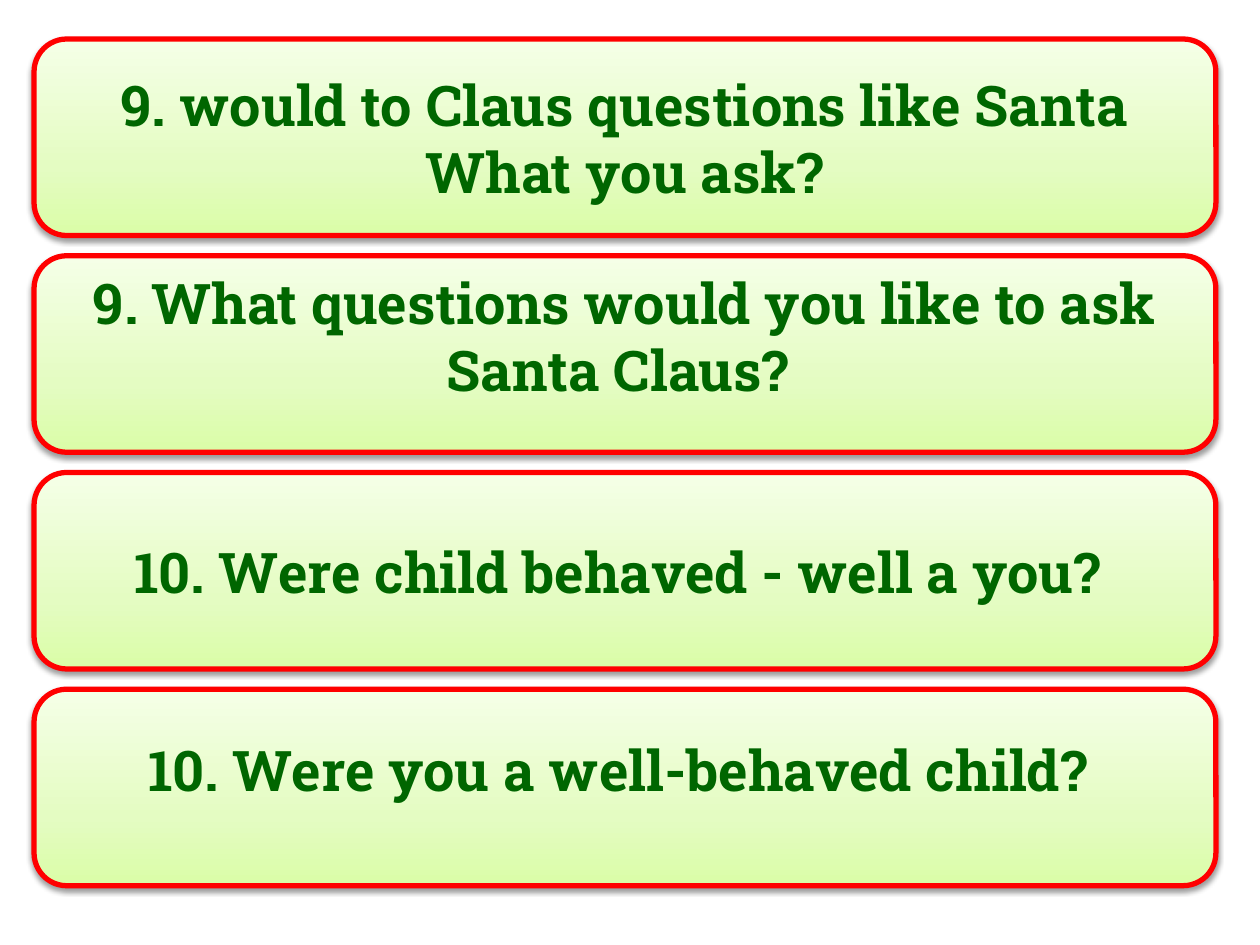
from lxml.etree import SubElement
from pptx import Presentation
from pptx.dml.color import RGBColor
from pptx.enum.shapes import MSO_SHAPE
from pptx.enum.text import MSO_ANCHOR, PP_ALIGN
from pptx.oxml.ns import qn
from pptx.util import Inches, Pt

RED = RGBColor(0xFF, 0x00, 0x00)
GREEN = RGBColor(0x00, 0x66, 0x00)
BLACK = RGBColor(0x00, 0x00, 0x00)
LIME = RGBColor(0xDA, 0xFD, 0xA7)
MINT = RGBColor(0xE4, 0xFC, 0xC2)
PALE = RGBColor(0xF5, 0xFF, 0xE7)

STOPS = [(0, LIME), (35, MINT), (100, PALE)]
FONT = {"name": "Roboto Slab", "size": Pt(32), "bold": True}

# One column of cards: left, top, width, height and row pitch in inches
LEFT, TOP, WIDE, HIGH, PITCH = 0.27, 0.31, 9.38, 1.56, 1.72
INSET, RAISED = 0.05, 0.34

# Each card: text and bottom inset (answers sit a little higher)
CARDS = [
    ("9. would to Claus questions like Santa What you ask?", INSET),
    ("9. What questions would you like to ask Santa Claus? ", RAISED),
    ("10. Were child behaved - well a you? ", INSET),
    ("10. Were you a well-behaved child? ", RAISED),
]


def shade(shape):
    """Fill with a gradient that runs from bottom to top."""
    shape.fill.gradient()
    shape.fill.gradient_angle = 90
    stops = shape.element.spPr.find(qn("a:gradFill")).find(qn("a:gsLst"))
    for old in list(stops):
        stops.remove(old)
    for share, color in STOPS:
        stop = SubElement(stops, qn("a:gs"), pos=str(share * 1000))
        SubElement(stop, qn("a:srgbClr"), val=str(color))


def drop(shape):
    """Add a soft shadow below the shape."""
    shape.shadow.inherit = False
    effects = shape.element.spPr.find(qn("a:effectLst"))
    outer = SubElement(effects, qn("a:outerShdw"), blurRad=str(Pt(3.1)),
                       dist=str(Pt(1.6)), dir="5400000", rotWithShape="0")
    color = SubElement(outer, qn("a:srgbClr"), val=str(BLACK))
    SubElement(color, qn("a:alpha"), val="38000")


def card(slide, box, text, bottom):
    """Place one rounded card with its sentence in the given box."""
    shape = slide.shapes.add_shape(MSO_SHAPE.ROUNDED_RECTANGLE,
                                   *map(Inches, box))
    shape.line.color.rgb = RED
    shape.line.width = Pt(3)
    shade(shape)
    drop(shape)

    # Sentence
    frame = shape.text_frame
    frame.word_wrap = True
    frame.vertical_anchor = MSO_ANCHOR.MIDDLE
    frame.margin_bottom = Inches(bottom)
    para = frame.paragraphs[0]
    para.alignment = PP_ALIGN.CENTER
    run = para.add_run()
    run.text = text
    for key, value in FONT.items():
        setattr(run.font, key, value)
    run.font.color.rgb = GREEN


def main():
    deck = Presentation()
    deck.slide_width, deck.slide_height = Inches(10), Inches(7.5)
    slide = deck.slides.add_slide(deck.slide_layouts[6])
    for row, (text, bottom) in enumerate(CARDS):
        card(slide, (LEFT, TOP + row * PITCH, WIDE, HIGH), text, bottom)
    deck.save("out.pptx")


if __name__ == "__main__":
    main()
